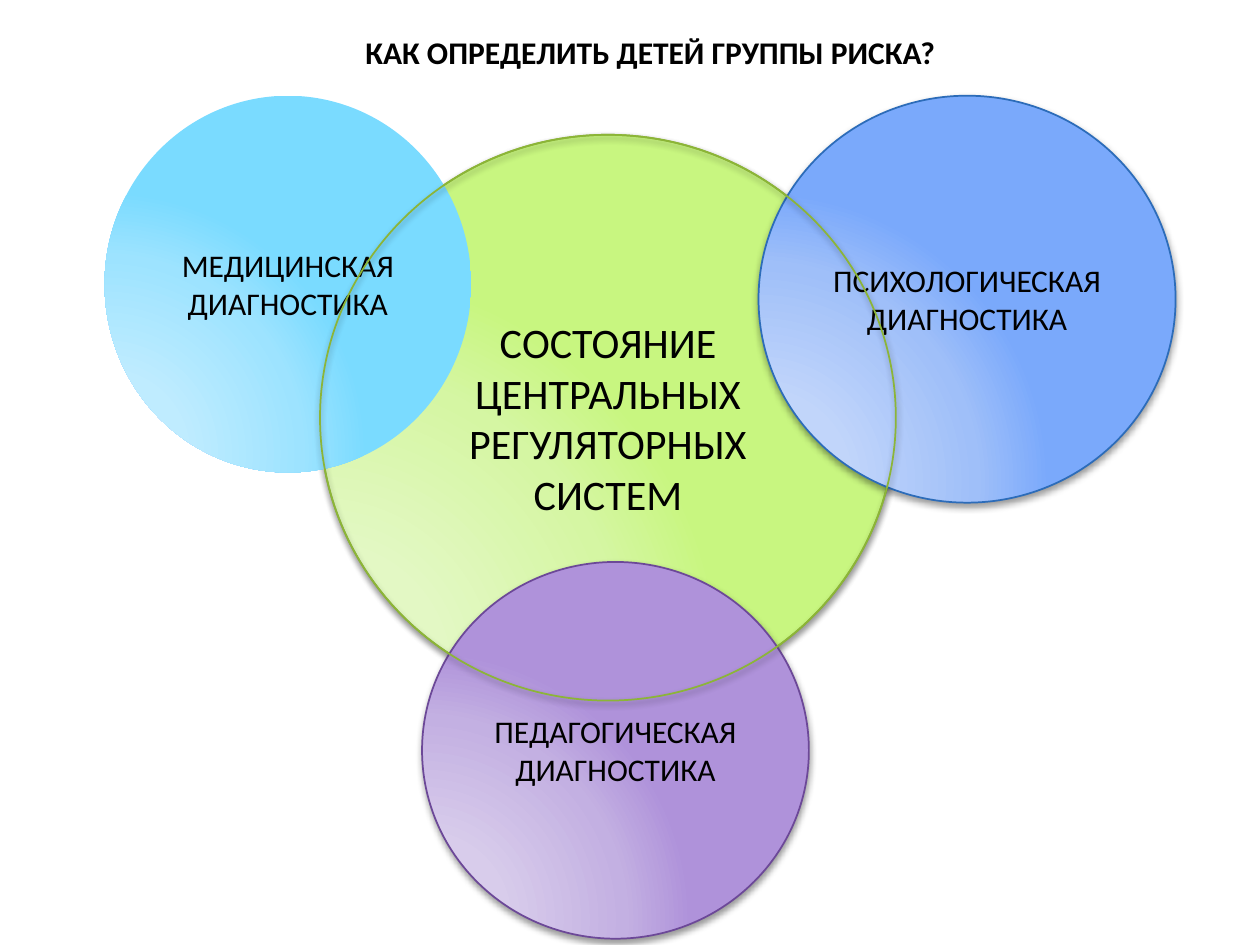
from dataclasses import dataclass
from typing import Optional

from lxml.etree import SubElement
from pptx import Presentation
from pptx.dml.color import RGBColor
from pptx.enum.shapes import MSO_SHAPE
from pptx.enum.text import MSO_ANCHOR, MSO_AUTO_SIZE, PP_ALIGN
from pptx.oxml.ns import qn
from pptx.util import Inches, Pt


@dataclass(frozen=True)
class Theme:
    font: str = "Calibri"
    text: str = "000000"
    shadow: str = "000000"
    body_size: int = 18
    center_size: int = 24
    line_width: int = 1
    green: tuple = ("E5F9C9", "E3F8C4", "D5F6A3", "C8F680")
    cyan: tuple = ("C4EEFF", "BFECFF", "9DE3FF", "7ADBFF")
    purple: tuple = ("DBD0ED", "D8CCEB", "C3B0E2", "AF92DA")
    blue: tuple = ("C7D8FB", "C1D5FA", "9FBFF9", "7AA9FB")
    green_line: str = "8CB537"
    purple_line: str = "6C4898"
    blue_line: str = "2C6CB9"


THEME = Theme()
STOPS = (0, 30, 75, 100)
FOCUS = {"l": 5, "t": 100, "r": 120, "b": 10}


@dataclass(frozen=True)
class Circle:
    box: tuple
    colors: Optional[tuple] = None
    line: Optional[str] = None
    text: str = ""
    size: int = THEME.body_size


CENTER_BOX = (2.54, 1.07, 4.57, 4.49)
CIRCLES = (
    Circle(CENTER_BOX, THEME.green, THEME.green_line,
           "СОСТОЯНИЕ ЦЕНТРАЛЬНЫХ РЕГУЛЯТОРНЫХ СИСТЕМ", THEME.center_size),
    Circle((0.83, 0.76, 2.91, 2.99), THEME.cyan, None, "МЕДИЦИНСКАЯ\nДИАГНОСТИКА"),
    Circle((3.35, 4.46, 3.07, 2.99), THEME.purple, THEME.purple_line,
           "ПЕДАГОГИЧЕСКАЯ\nДИАГНОСТИКА"),
    Circle((6.02, 0.76, 3.31, 3.23), THEME.blue, THEME.blue_line,
           "ПСИХОЛОГИЧЕСКАЯ ДИАГНОСТИКА"),
)
CENTER_OUTLINE = Circle(CENTER_BOX, line=THEME.green_line)


def add_color(parent, color: str):
    return SubElement(parent, qn("a:srgbClr"), val=color)


def set_radial_fill(sp, colors: tuple) -> None:
    sp.fill.gradient()
    grad = sp._element.spPr.find(qn("a:gradFill"))
    for child in list(grad):
        grad.remove(child)
    stops = SubElement(grad, qn("a:gsLst"))
    for pos, color in zip(STOPS, colors):
        add_color(SubElement(stops, qn("a:gs"), pos=str(pos * 1000)), color)
    radial = SubElement(grad, qn("a:path"), path="circle")
    SubElement(radial, qn("a:fillToRect"),
               {side: str(value * 1000) for side, value in FOCUS.items()})


def add_shadow(sp) -> None:
    effects = sp._element.spPr.find(qn("a:effectLst"))
    shadow = SubElement(effects, qn("a:outerShdw"), blurRad=str(Pt(4)),
                        dist=str(Pt(2)), dir=str(90 * 60000), rotWithShape="0")
    SubElement(add_color(shadow, THEME.shadow), qn("a:alpha"), val="40000")


def write_text(tf, text: str, size: int, align, bold: bool, **frame) -> None:
    tf.text = text
    for name, value in frame.items():
        setattr(tf, name, value)
    style = {"name": THEME.font, "size": Pt(size), "bold": bold}
    for p in tf.paragraphs:
        p.alignment = align
        for r in p.runs:
            for name, value in style.items():
                setattr(r.font, name, value)
            r.font.color.rgb = RGBColor.from_string(THEME.text)


def draw_circle(shapes, circle: Circle) -> None:
    sp = shapes.add_shape(MSO_SHAPE.OVAL, *map(Inches, circle.box))
    sp.shadow.inherit = False
    if circle.colors:
        set_radial_fill(sp, circle.colors)
    else:
        sp.fill.background()
    if circle.line:
        sp.line.color.rgb = RGBColor.from_string(circle.line)
        sp.line.width = Pt(THEME.line_width)
        add_shadow(sp)
    else:
        sp.line.fill.background()
    if circle.text:
        write_text(sp.text_frame, circle.text, circle.size, PP_ALIGN.CENTER, False,
                   word_wrap=True, vertical_anchor=MSO_ANCHOR.MIDDLE)


def draw_title(s, text: str) -> None:
    title = s.shapes.title
    box = dict(left=2.8, top=0.21, width=4.77, height=0.4)
    for name, value in box.items():
        setattr(title, name, Inches(value))
    write_text(title.text_frame, text, THEME.body_size, PP_ALIGN.LEFT, True,
               word_wrap=False, vertical_anchor=MSO_ANCHOR.TOP,
               auto_size=MSO_AUTO_SIZE.SHAPE_TO_FIT_TEXT)


def main() -> None:
    prs = Presentation()
    prs.slide_width, prs.slide_height = Inches(10), Inches(7.5)
    s = prs.slides.add_slide(prs.slide_layouts[5])

    # Heading
    draw_title(s, "КАК ОПРЕДЕЛИТЬ ДЕТЕЙ ГРУППЫ РИСКА?")

    # Overlapping circles
    group = s.shapes.add_group_shape()
    for circle in CIRCLES:
        draw_circle(group.shapes, circle)

    # Outline of the central circle above the others
    draw_circle(s.shapes, CENTER_OUTLINE)

    prs.save("out.pptx")


if __name__ == "__main__":
    main()
